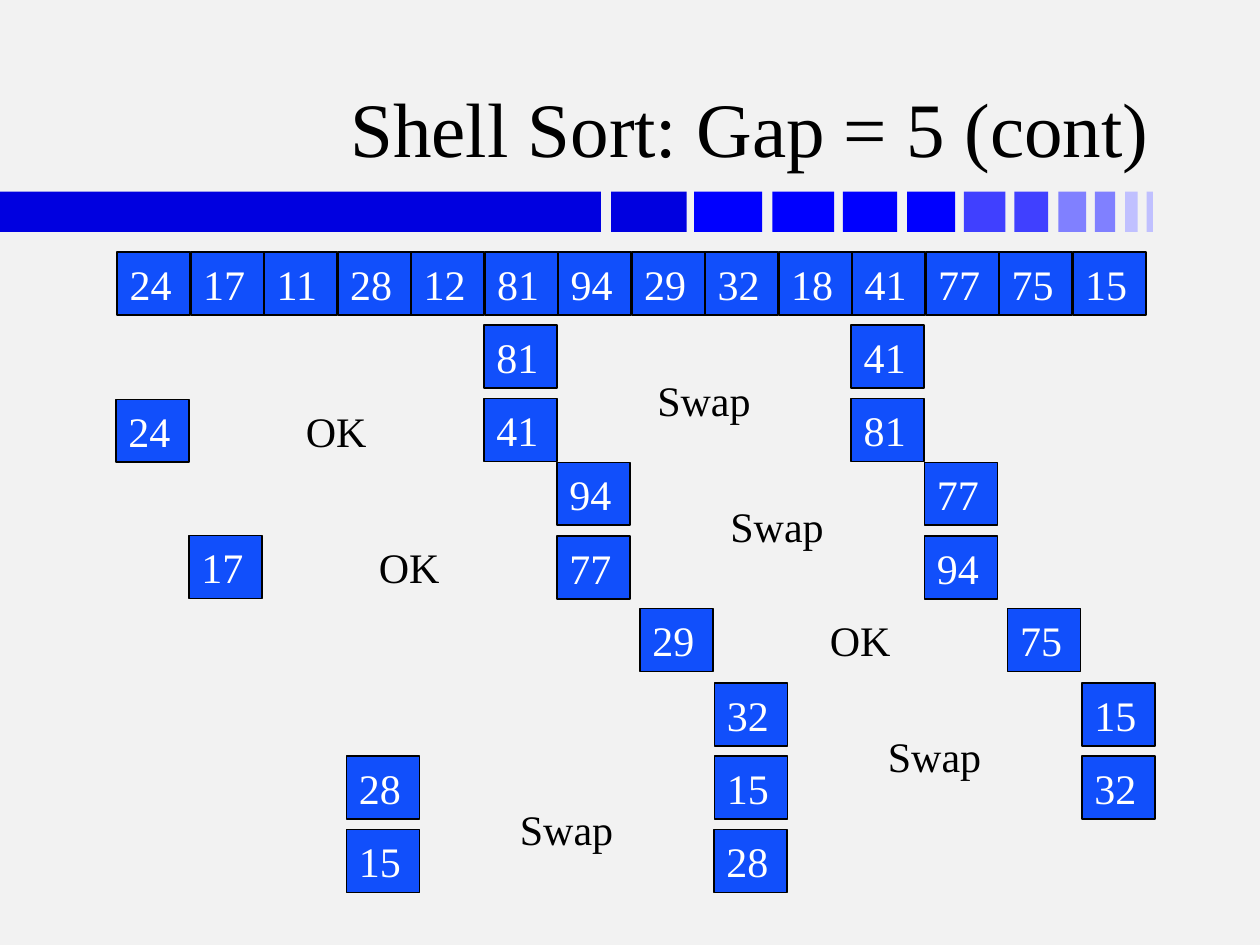
from dataclasses import dataclass

from pptx import Presentation
from pptx.dml.color import RGBColor
from pptx.enum.shapes import MSO_SHAPE
from pptx.enum.text import MSO_ANCHOR, PP_ALIGN
from pptx.shapes.autoshape import Shape
from pptx.slide import Slide
from pptx.util import Inches, Pt

COLORS = {
    "background": "F2F2F2",
    "cell": "114FFB",
    "cell_text": "FFFFFF",
    "ink": "000000",
    "bar_dark": "0000E0",
    "bar_blue": "0000FF",
    "bar_mid": "4040FF",
    "bar_light": "8080FF",
    "bar_pale": "C0C0FF",
}
FONT = "Times New Roman"
GAP = 5
CELL_PITCH = 7 / 12
CELL_WIDTH, CELL_HEIGHT = 0.58, 0.5
ARRAY_LEFT, ARRAY_TOP = 0.93, 2
VALUES = [24, 17, 11, 28, 12, 81, 94, 29, 32, 18, 41, 77, 75, 15]
VERDICT_WIDTHS = {"Swap": 0.94, "OK": 0.68}


@dataclass
class Bar:
    left: float
    width: float
    color: str


@dataclass
class Comparison:
    """Rows of (left, right) values GAP columns apart; None is not drawn."""
    left: float
    top: float
    rows: list[tuple[int | None, int | None]]
    verdict: str
    verdict_top: float


BARS = [
    Bar(0, 4.77, "bar_dark"),
    Bar(4.85, 0.6, "bar_dark"),
    Bar(5.51, 0.54, "bar_blue"),
    Bar(6.13, 0.49, "bar_blue"),
    Bar(6.69, 0.43, "bar_blue"),
    Bar(7.2, 0.38, "bar_blue"),
    Bar(7.65, 0.33, "bar_mid"),
    Bar(8.05, 0.27, "bar_mid"),
    Bar(8.4, 0.22, "bar_light"),
    Bar(8.69, 0.16, "bar_light"),
    Bar(8.93, 0.1, "bar_pale"),
    Bar(9.1, 0.05, "bar_pale"),
]

COMPARISONS = [
    Comparison(3.84, 2.58, [(81, 41), (41, 81)], "Swap", 2.92),
    Comparison(4.42, 3.67, [(94, 77), (77, 94)], "Swap", 3.92),
    Comparison(5.08, 4.83, [(29, 75)], "OK", 4.83),
    Comparison(5.67, 5.42, [(32, 15), (15, 32)], "Swap", 5.75),
    Comparison(0.92, 3.17, [(24, None)], "OK", 3.17),
    Comparison(1.5, 4.25, [(17, None)], "OK", 4.25),
    Comparison(2.75, 6, [(28, None), (15, 28)], "Swap", 6.33),
]


def rgb(name: str) -> RGBColor:
    return RGBColor.from_string(COLORS[name])


def add_rectangle(page: Slide, left: float, top: float, width: float,
                  height: float, color: str) -> Shape:
    box = page.shapes.add_shape(MSO_SHAPE.RECTANGLE, Inches(left), Inches(top),
                                Inches(width), Inches(height))
    box.shadow.inherit = False
    box.fill.solid()
    box.fill.fore_color.rgb = rgb(color)
    box.line.fill.background()
    return box


def write(box: Shape, text: str, size: int, color: str,
          alignment: PP_ALIGN = PP_ALIGN.LEFT) -> None:
    paragraph = box.text_frame.paragraphs[0]
    paragraph.text = text
    paragraph.alignment = alignment
    paragraph.font.name = FONT
    paragraph.font.size = Pt(size)
    paragraph.font.color.rgb = rgb(color)


def add_cell(page: Slide, left: float, top: float, value: int) -> None:
    box = add_rectangle(page, left, top, CELL_WIDTH, CELL_HEIGHT, "cell")
    box.line.color.rgb = rgb("ink")
    box.line.width = Pt(1)
    box.text_frame.word_wrap = False
    box.text_frame.vertical_anchor = MSO_ANCHOR.MIDDLE
    write(box, str(value), 24, "cell_text")


def add_title(page: Slide, text: str) -> None:
    box = page.shapes.add_textbox(Inches(0.74), Inches(0.19), Inches(8.48), Inches(1.23))
    box.text_frame.word_wrap = True
    box.text_frame.vertical_anchor = MSO_ANCHOR.BOTTOM
    write(box, text, 44, "ink", PP_ALIGN.RIGHT)


def add_comparison(page: Slide, comparison: Comparison) -> None:
    """Draw the cells, with the verdict centred between the two columns."""
    distance = GAP * CELL_PITCH
    for row, pair in enumerate(comparison.rows):
        for side, value in enumerate(pair):
            if value is not None:
                add_cell(page, comparison.left + side * distance,
                         comparison.top + row * CELL_PITCH, value)
    width = VERDICT_WIDTHS[comparison.verdict]
    left = comparison.left + (distance + CELL_WIDTH - width) / 2
    label = page.shapes.add_textbox(Inches(left), Inches(comparison.verdict_top),
                                    Inches(width), Inches(CELL_HEIGHT))
    label.text_frame.word_wrap = False
    write(label, comparison.verdict, 24, "ink")


def main() -> None:
    deck = Presentation()
    deck.slide_width, deck.slide_height = Inches(10), Inches(7.5)
    page = deck.slides.add_slide(deck.slide_layouts[6])
    page.background.fill.solid()
    page.background.fill.fore_color.rgb = rgb("background")

    for bar in BARS:
        add_rectangle(page, bar.left, 1.52, bar.width, 0.32, bar.color)
    add_title(page, "Shell Sort: Gap = 5 (cont)")
    for column, value in enumerate(VALUES):
        add_cell(page, ARRAY_LEFT + column * CELL_PITCH, ARRAY_TOP, value)
    for comparison in COMPARISONS:
        add_comparison(page, comparison)

    deck.save("out.pptx")


if __name__ == "__main__":
    main()
